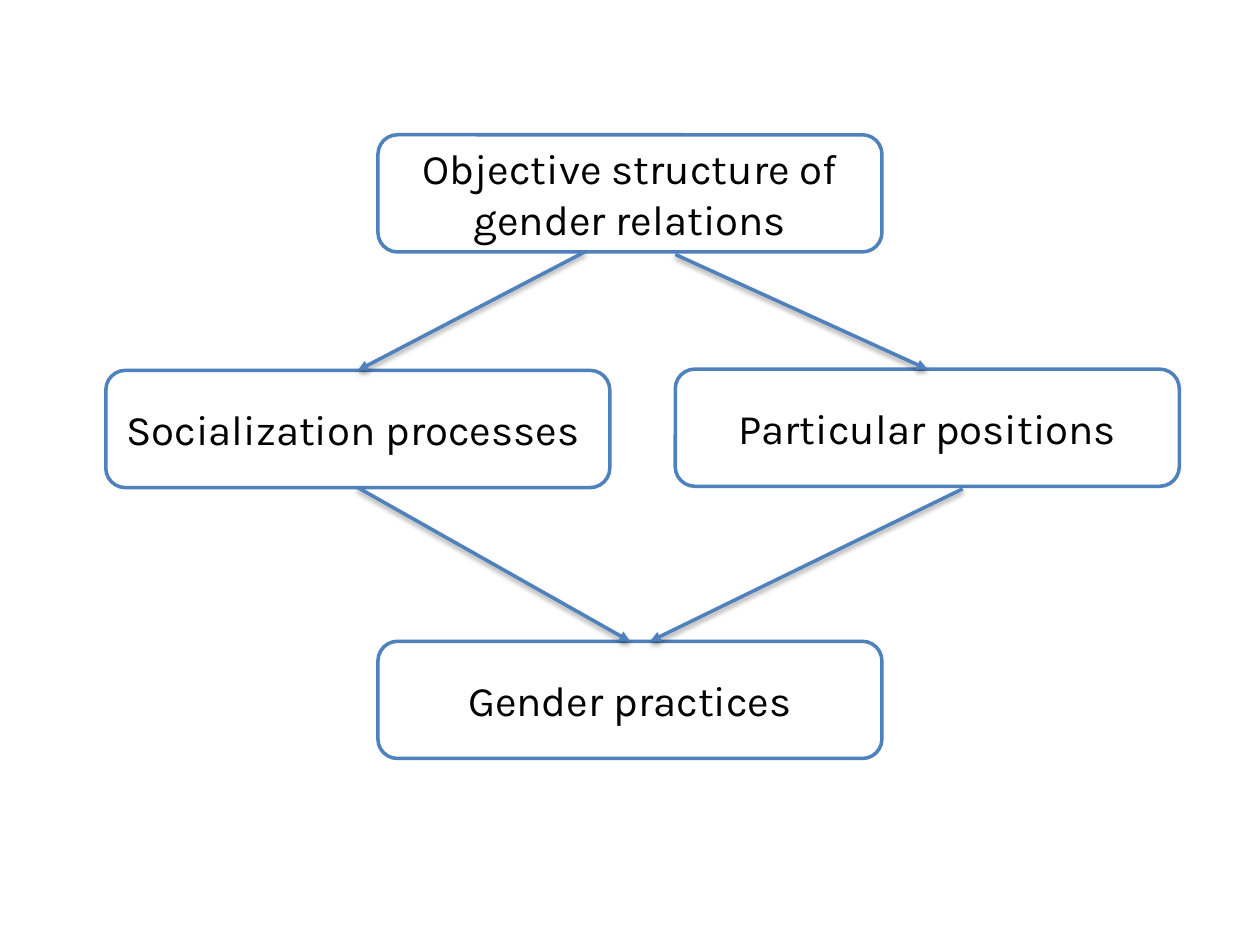
from lxml import etree
from pptx import Presentation, util as u
from pptx.dml.color import RGBColor
from pptx.enum import shapes, text
from pptx.oxml.ns import qn

THEME = {
    "line": RGBColor.from_string("4F81BD"),
    "fill": RGBColor.from_string("FFFFFF"),
    "ink": RGBColor.from_string("000000"),
    "shadow": "000000",
    "font": "Karla",
    "size": u.Pt(24),
    "weight": u.Pt(2),
}
BOX_WIDTH, BOX_HEIGHT = 4, 0.93
TOP, BOTTOM = 0, 2  # connection sites

# Content: name -> (label, left, top)
BOXES = {
    "structure": ("Objective structure of gender relations", 3, 1.07),
    "positions": ("Particular positions", 5.36, 2.93),
    "socialization": ("Socialization processes ", 0.84, 2.94),
    "practices": ("Gender practices", 3, 5.09),
}
# Each end is a box name (joined at its middle) or a free point
ARROWS = [
    ((4.64, 2), "socialization"),
    ((5.36, 2.02), "positions"),
    ((7.64, 3.88), (5.16, 5.09)),
    ("socialization", "practices"),
]


def add_box(page, label, left, top):
    box = page.shapes.add_shape(
        shapes.MSO_SHAPE.ROUNDED_RECTANGLE, u.Inches(left), u.Inches(top),
        u.Inches(BOX_WIDTH), u.Inches(BOX_HEIGHT))
    box.shadow.inherit = False
    box.fill.solid()
    box.fill.fore_color.rgb = THEME["fill"]
    box.line.color.rgb = THEME["line"]
    box.line.width = THEME["weight"]
    frame = box.text_frame
    frame.word_wrap = True
    frame.vertical_anchor = text.MSO_ANCHOR.MIDDLE
    para = frame.paragraphs[0]
    para.text = label
    para.alignment = text.PP_ALIGN.CENTER
    para.font.name = THEME["font"]
    para.font.size = THEME["size"]
    para.font.color.rgb = THEME["ink"]
    return box


def end_point(end, site):
    if isinstance(end, str):
        _, left, top = BOXES[end]
        return left + BOX_WIDTH / 2, top + (BOX_HEIGHT if site == BOTTOM else 0)
    return end


def add_arrow(page, boxes, start, finish):
    points = (*end_point(start, BOTTOM), *end_point(finish, TOP))
    arrow = page.shapes.add_connector(
        shapes.MSO_CONNECTOR.STRAIGHT, *(u.Inches(value) for value in points))
    if isinstance(start, str):
        arrow.begin_connect(boxes[start], BOTTOM)
    if isinstance(finish, str):
        arrow.end_connect(boxes[finish], TOP)
    arrow.line.color.rgb = THEME["line"]
    arrow.line.width = THEME["weight"]

    # Arrowhead and soft shadow below the line
    properties = arrow.line._get_or_add_ln()
    etree.SubElement(properties, qn("a:tailEnd"), type="triangle")
    effects = etree.SubElement(arrow._element.spPr, qn("a:effectLst"))
    shadow = etree.SubElement(
        effects, qn("a:outerShdw"), blurRad=str(u.Pt(3.1)),
        dist=str(u.Pt(1.6)), dir="5400000", rotWithShape="0")
    color = etree.SubElement(shadow, qn("a:srgbClr"), val=THEME["shadow"])
    etree.SubElement(color, qn("a:alpha"), val="38000")


def main():
    deck = Presentation()
    deck.slide_width, deck.slide_height = u.Inches(10), u.Inches(7.5)
    page = deck.slides.add_slide(deck.slide_layouts[6])
    boxes = {name: add_box(page, *details) for name, details in BOXES.items()}
    for start, finish in ARROWS:
        add_arrow(page, boxes, start, finish)
    deck.save("out.pptx")


if __name__ == "__main__":
    main()
